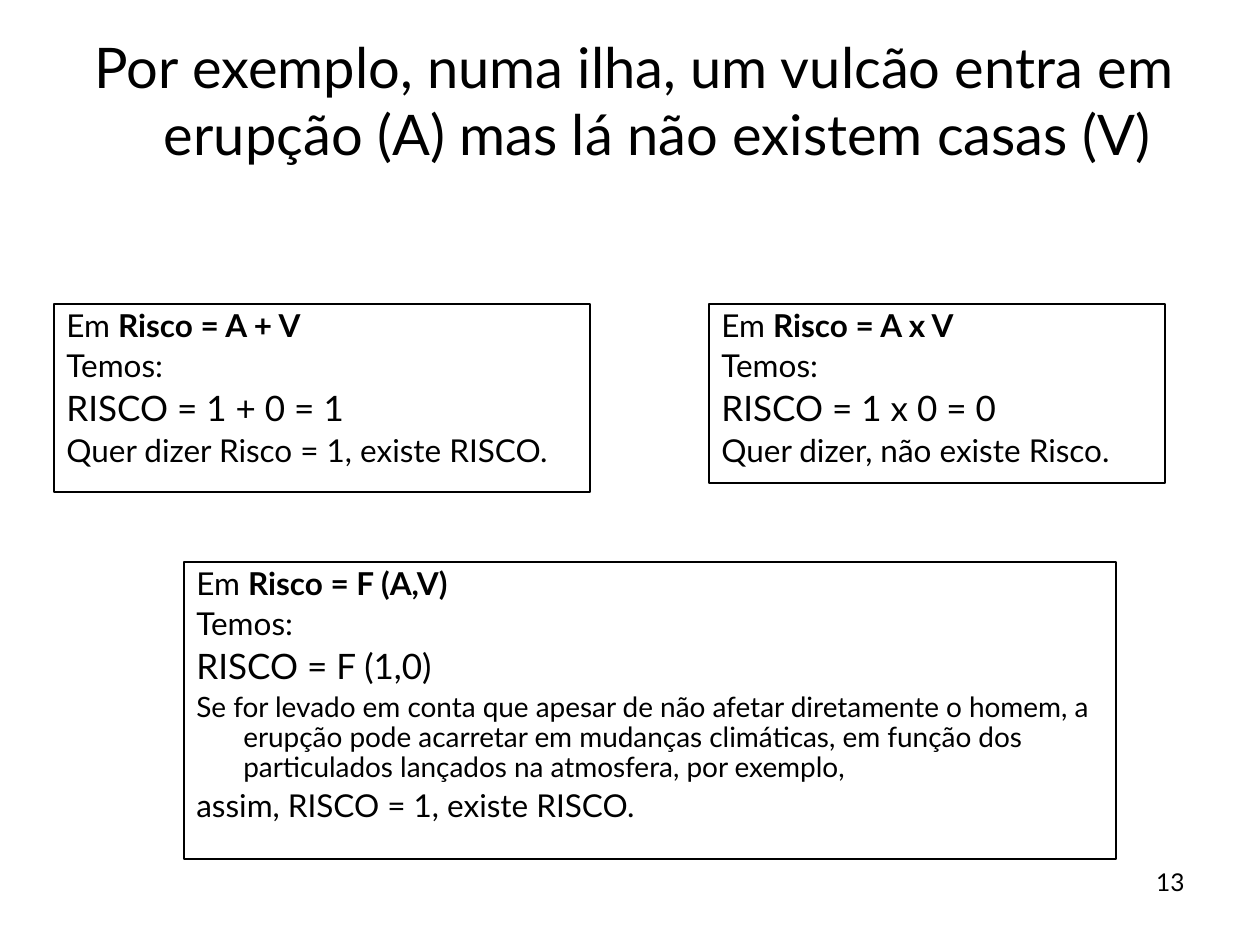
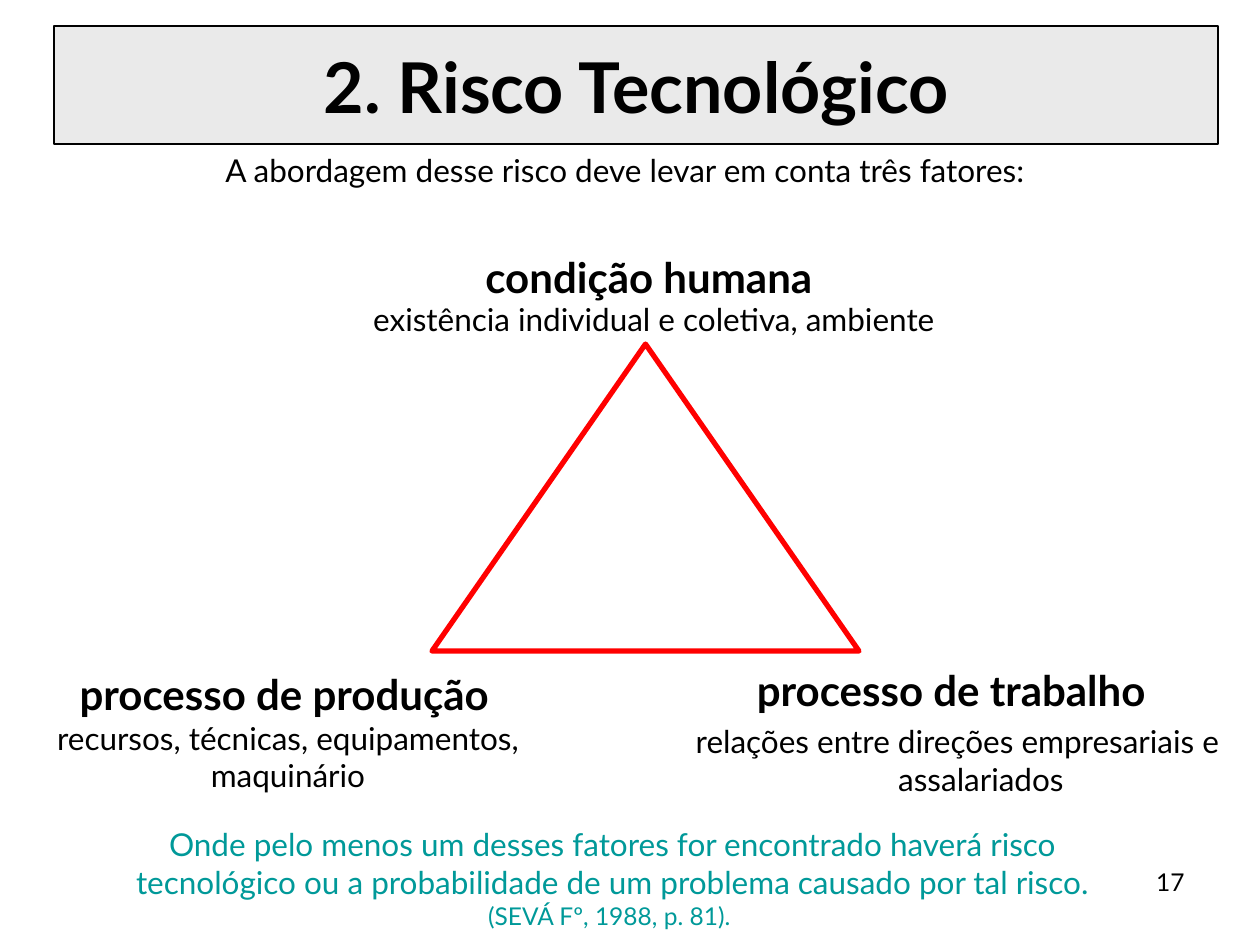
import pptx
import pptx.util
import pptx.dml.color
import pptx.enum.shapes
import pptx.enum.text

PX = 914400 / 126
FONT = "Lato"
HANGING = 47
COLORS = {"text": "000000", "band": "EAEAEA", "paper": "FFFFFF",
          "triangle": "FF0000", "note": "009999"}
ALIGN = pptx.enum.text.PP_ALIGN
SHAPES = pptx.enum.shapes.MSO_SHAPE

# Content: a run is (text, size, bold); a paragraph is a list of runs
ISLAND_TITLE = [[("Por exemplo, numa ilha, um vulcão entra em erupção (A) "
                  "mas lá não existem casas (V)", 32, False)]]

# Each formula box: place, formula, result, closing lines with sizes
FORMULA_BOXES = [
    ((184, 562, 932, 297), "Risco = F (A,V)", "RISCO = F (1,0)", [
        ("Se for levado em conta que apesar de não afetar diretamente o homem, "
         "a erupção pode acarretar em mudanças climáticas, em função dos "
         "particulados lançados na atmosfera, por exemplo,", 16),
        ("assim, RISCO = 1, existe RISCO.", 18)]),
    ((54, 304, 536, 188), "Risco = A + V", "RISCO = 1 + 0 = 1",
     [("Quer dizer Risco = 1, existe RISCO.", 18)]),
    ((709, 304, 456, 179), "Risco = A x V", "RISCO = 1 x 0 = 0",
     [("Quer dizer, não existe Risco.", 18)]),
]

TECH_TITLE = [[("2. Risco Tecnológico", 40, True)]]
TECH_INTRO = [[("A abordagem desse risco deve levar em conta três fatores:", 18, False)]]
TECH_NOTE = [[("Onde pelo menos um desses fatores for encontrado haverá risco tecnológico "
               "ou a probabilidade de um problema causado por tal risco. ", 18, False),
              ("(SEVÁ Fº, 1988, p. 81). ", 14, False)]]

# Each factor: place, paragraphs, paragraph format
FACTORS = [
    ((272, 255, 764, 100),
     [[("condição humana ", 24, True)],
      [("existência individual e coletiva, ambiente", 18, False)]],
     {"hanging": HANGING, "before": 0.2, "line": 0.8}),
    ((630, 651, 655, 179),
     [[("processo de trabalho", 24, True), (" ", 28, False)],
      [("relações entre direções empresariais e assalariados", 18, False)]],
     {"hanging": HANGING, "before": 0.2}),
    ((0, 662, 576, 139),
     [[("processo de produção", 24, True), (" ", 18, True)],
      [("recursos, técnicas, equipamentos, maquinário", 18, False)]],
     {}),
]
TRIANGLE = (432, 344, 427, 307)
PAGE_NUMBER = (903, 861, 294, 66)


def emu(pixels):
    return round(pixels * PX)


def rgb(name):
    return pptx.dml.color.RGBColor.from_string(COLORS[name])


def write(shape, paragraphs, align=ALIGN.LEFT, color="text", hanging=0, before=0, line=None):
    """Fill a shape with text; before is a share of the paragraph's font size."""
    frame = shape.text_frame
    frame.word_wrap = True
    for index, runs in enumerate(paragraphs):
        paragraph = frame.add_paragraph() if index else frame.paragraphs[0]
        paragraph.alignment = align
        paragraph.space_before = pptx.util.Pt(before * runs[0][1])
        if line:
            paragraph.line_spacing = line
        if hanging:
            properties = paragraph._p.get_or_add_pPr()
            properties.set("marL", str(emu(hanging)))
            properties.set("indent", str(-emu(hanging)))
        for text, size, bold in runs:
            run = paragraph.add_run()
            run.text = text
            run.font.name = FONT
            run.font.size = pptx.util.Pt(size)
            run.font.bold = bold
            run.font.color.rgb = rgb(color)


def add_text(slide, place, paragraphs, **text_format):
    write(slide.shapes.add_textbox(*map(emu, place)), paragraphs, **text_format)


def add_outline(slide, kind, place, line="text", width=0.75, fill=None):
    shape = slide.shapes.add_shape(kind, *map(emu, place))
    shape.shadow.inherit = False
    shape.line.color.rgb = rgb(line)
    shape.line.width = pptx.util.Pt(width)
    if fill:
        shape.fill.solid()
        shape.fill.fore_color.rgb = rgb(fill)
    else:
        shape.fill.background()
    return shape


def add_slide(presentation):
    return presentation.slides.add_slide(presentation.slide_layouts[6])


def add_page_number(slide, number):
    add_text(slide, PAGE_NUMBER, [[(number, 14, False)]], align=ALIGN.RIGHT)


def build_island_slide(presentation):
    slide = add_slide(presentation)
    add_text(slide, (34, 26, 1201, 179), ISLAND_TITLE,
             align=ALIGN.CENTER, hanging=HANGING, before=0.2)
    for place, formula, result, closing in FORMULA_BOXES:
        box = add_outline(slide, SHAPES.RECTANGLE, place)
        box.text_frame.vertical_anchor = pptx.enum.text.MSO_ANCHOR.TOP
        paragraphs = [[("Em ", 18, False), (formula, 18, True)],
                      [("Temos:", 18, False)],
                      [(result, 20, False)]]
        paragraphs += [[(text, size, False)] for text, size in closing]
        write(box, paragraphs, hanging=HANGING, before=0.2, line=0.9)
    add_page_number(slide, "13")


def build_technology_slide(presentation):
    slide = add_slide(presentation)
    # Title band
    band = add_outline(slide, SHAPES.RECTANGLE, (54, 26, 1164, 118), fill="band")
    band.text_frame.vertical_anchor = pptx.enum.text.MSO_ANCHOR.MIDDLE
    write(band, TECH_TITLE, align=ALIGN.CENTER)
    # Closing note, factors and the triangle between them
    add_text(slide, (94, 819, 1037, 117), TECH_NOTE,
             align=ALIGN.CENTER, color="note", before=0.2)
    for place, paragraphs, text_format in FACTORS:
        add_text(slide, place, paragraphs, align=ALIGN.CENTER, **text_format)
    add_outline(slide, SHAPES.ISOSCELES_TRIANGLE, TRIANGLE, "triangle", 3, "paper")
    add_text(slide, (213, 145, 873, 50), TECH_INTRO, before=0.5)
    add_page_number(slide, "17")


def main():
    presentation = pptx.Presentation()
    presentation.slide_width = emu(1260)
    presentation.slide_height = emu(945)
    build_island_slide(presentation)
    build_technology_slide(presentation)
    presentation.save("out.pptx")


if __name__ == "__main__":
    main()
